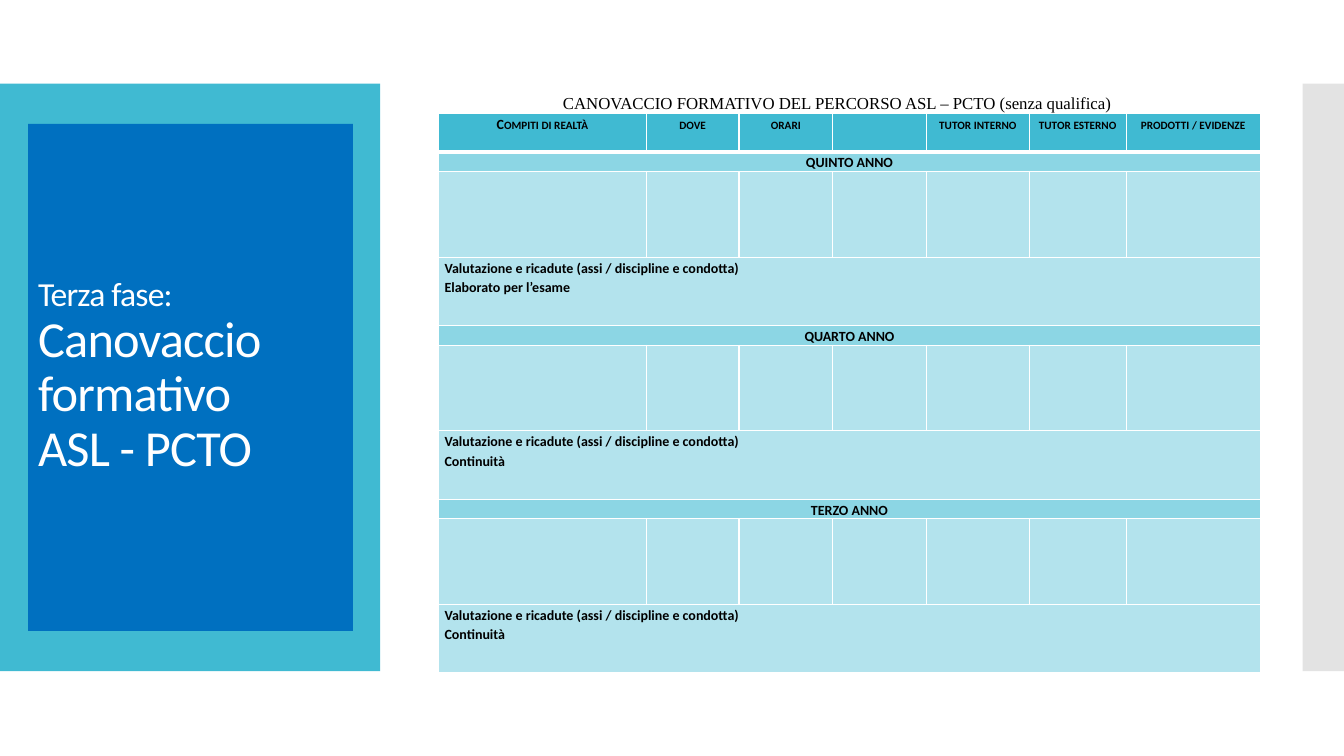
from lxml import etree
from pptx import Presentation
from pptx import util as u
from pptx.dml.color import RGBColor
from pptx.enum import shapes, text
from pptx.oxml import ns

COLORS = {"teal": "40BAD2", "band": "8CD6E4", "pale": "B3E3ED",
          "blue": "0070C0", "grey": "C8C8C8", "white": "FFFFFF", "black": "000000"}
COLUMNS = [2.06, 0.92, 0.93, 0.93, 1.02, 0.96, 1.33]
HEADINGS = ["Compiti di realtà", "dove", "orari", "", "tutor interno",
            "tutor esterno", "prodotti / evidenze"]
YEARS = [("QUINTO ANNO", "Elaborato per l’esame"),
         ("QUARTO ANNO", "Continuità"),
         ("TERZO ANNO", "Continuità")]
HEADER_HEIGHT = 0.38
YEAR_HEIGHTS = [0.18, 0.85, 0.68]
CENTER, JUSTIFY = text.PP_ALIGN.CENTER, text.PP_ALIGN.JUSTIFY


class Canvas:
    """Slide under construction with its shared style."""

    def __init__(self, page):
        self.page = page

    def color(self, name):
        return RGBColor.from_string(COLORS[name])

    def style(self, span, size, color, font="Calibri", bold=False):
        span.font.size = u.Pt(size)
        span.font.name = font
        span.font.bold = bold
        span.font.color.rgb = self.color(color)

    def panel(self, left, top, width, height, fill, alpha=None):
        box = self.page.shapes.add_shape(
            shapes.MSO_SHAPE.RECTANGLE, *map(u.Inches, (left, top, width, height)))
        box.shadow.inherit = False
        box.fill.solid()
        box.fill.fore_color.rgb = self.color(fill)
        box.line.fill.background()
        if alpha is not None:
            tint = box.fill._xPr.find(".//" + ns.qn("a:srgbClr"))
            etree.SubElement(tint, ns.qn("a:alpha"), val=str(alpha * 1000))
        return box

    def title(self, box, words, sizes):
        box.text_frame.word_wrap = True
        box.text_frame.vertical_anchor = text.MSO_ANCHOR.MIDDLE
        para = box.text_frame.paragraphs[0]
        para.text = words
        para.alignment = text.PP_ALIGN.LEFT
        para.line_spacing = 0.9
        for span, size in zip(para.runs, sizes):
            self.style(span, size, "white")
            span.font._element.set("spc", "-60")

    def caption(self, left, top, width, height, words):
        box = self.page.shapes.add_textbox(*map(u.Inches, (left, top, width, height)))
        box.text_frame.word_wrap = True
        para = box.text_frame.paragraphs[0]
        para.text = words
        para.alignment = CENTER
        para.line_spacing = 1.15
        self.style(para.runs[0], 12, "black", "Times New Roman")

    def table(self, left, top, columns, rows):
        frame = self.page.shapes.add_table(
            len(rows), len(columns),
            *map(u.Inches, (left, top, sum(columns), sum(rows))))
        grid = frame.table
        grid.first_row = grid.horz_banding = False
        for column, width in zip(grid.columns, columns):
            column.width = u.Inches(width)
        for row, height in zip(grid.rows, rows):
            row.height = u.Inches(height)
        return grid

    def cell(self, cell, fill, words="", align=CENTER, small_caps=False, bottom=1):
        cell.margin_left = cell.margin_right = u.Inches(0.06)
        cell.margin_top = cell.margin_bottom = 0
        self.borders(cell, bottom)
        cell.fill.solid()
        cell.fill.fore_color.rgb = self.color(fill)
        cell.text_frame.text = words
        for para in cell.text_frame.paragraphs:
            para.alignment = align
            para.line_spacing = 1.15
            for span in para.runs:
                self.style(span, 10, "black", bold=True)
                if small_caps:
                    span.font._element.set("cap", "small")

    def borders(self, cell, bottom):
        properties = cell._tc.get_or_add_tcPr()
        for side, points in (("L", 1), ("R", 1), ("T", 1), ("B", bottom)):
            line = etree.SubElement(properties, ns.qn("a:ln" + side), w=str(u.Pt(points)))
            paint = etree.SubElement(line, ns.qn("a:solidFill"))
            etree.SubElement(paint, ns.qn("a:srgbClr"), val=COLORS["white"])


def main():
    deck = Presentation()
    deck.slide_width, deck.slide_height = u.Inches(13.33), u.Inches(7.5)
    canvas = Canvas(deck.slides.add_slide(deck.slide_layouts[6]))

    canvas.panel(0, 0.83, 3.77, 5.83, "teal")
    canvas.panel(12.92, 0.83, 0.41, 5.83, "grey", alpha=50)
    title_box = canvas.panel(0.28, 1.23, 3.22, 5.03, "blue")
    canvas.title(title_box, "Terza fase:\vCanovaccio formativo \vASL - PCTO", [24, 36, 36])
    canvas.caption(4.97, 0.84, 6.67, 0.32,
                   "CANOVACCIO FORMATIVO DEL PERCORSO ASL – PCTO (senza qualifica)")

    grid = canvas.table(4.35, 1.13, COLUMNS, [HEADER_HEIGHT] + YEAR_HEIGHTS * len(YEARS))
    last = len(COLUMNS) - 1
    for column, heading in enumerate(HEADINGS):
        canvas.cell(grid.cell(0, column), "teal", heading, small_caps=True, bottom=3)
    for index, (year, outcome) in enumerate(YEARS):
        band = 1 + index * len(YEAR_HEIGHTS)
        review = band + 2
        for row, fill in ((band, "band"), (band + 1, "pale"), (review, "pale")):
            for column in range(len(COLUMNS)):
                canvas.cell(grid.cell(row, column), fill)
        for row in (band, review):
            grid.cell(row, 0).merge(grid.cell(row, last))
        for row, fill, words, align in (
                (band, "band", year, CENTER),
                (review, "pale",
                 "Valutazione e ricadute (assi / discipline e condotta)\n" + outcome, JUSTIFY)):
            cell = grid.cell(row, 0)
            cell.text_frame.text = words
            for para in cell.text_frame.paragraphs:
                para.alignment = align
                para.line_spacing = 1.15
                canvas.style(para.runs[0], 10, "black", bold=True)

    deck.save("out.pptx")


if __name__ == "__main__":
    main()
